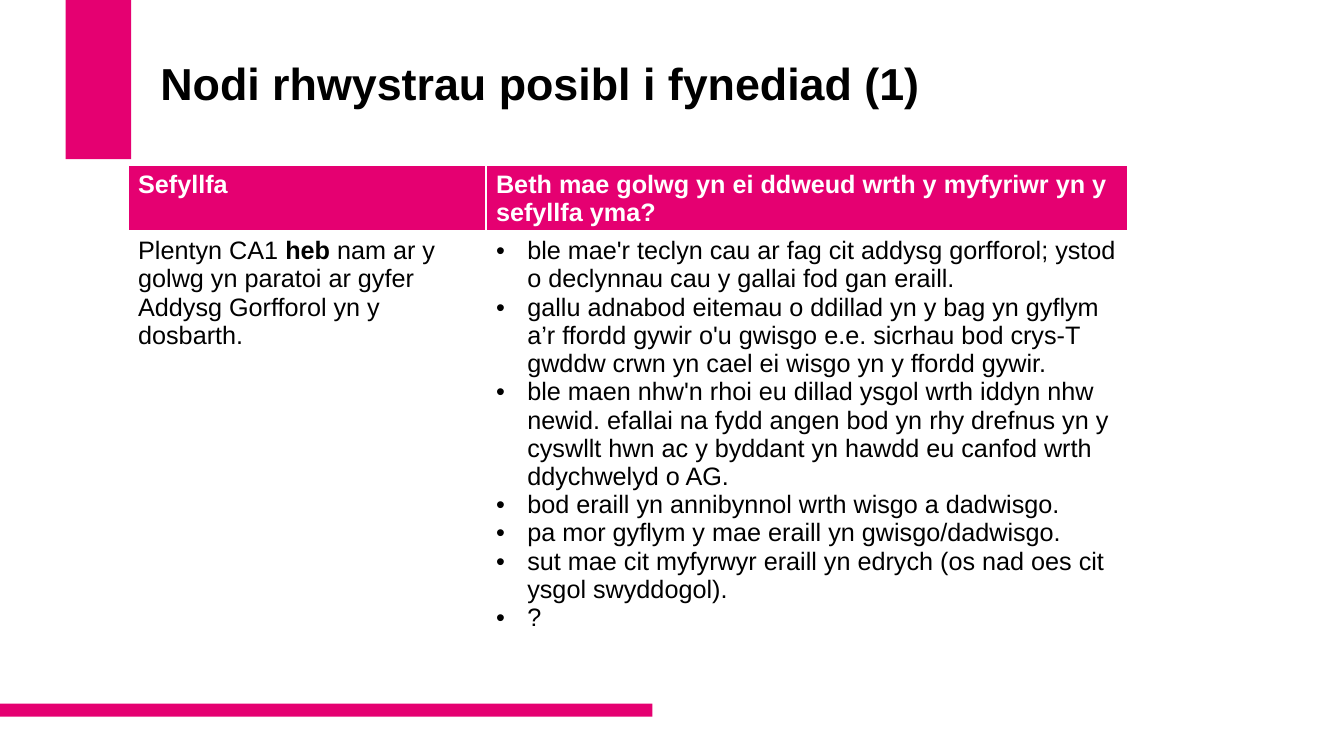
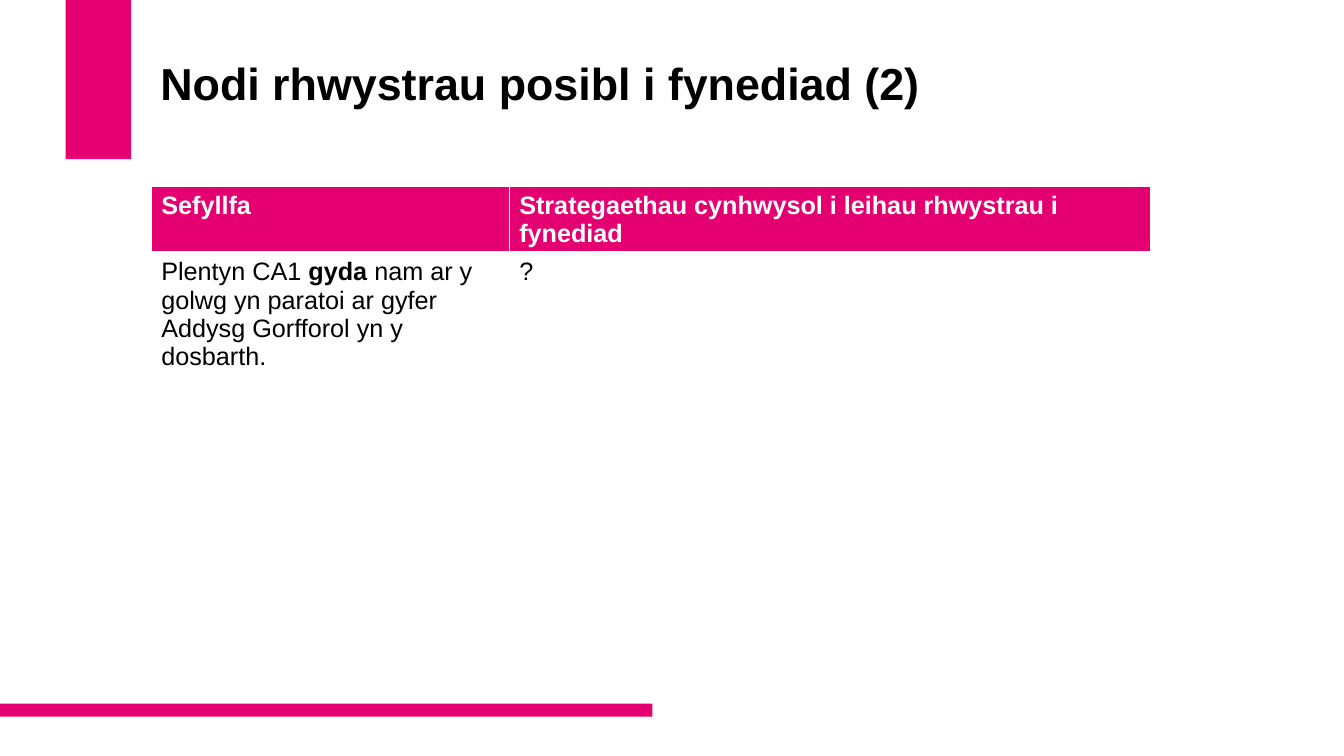
from lxml.etree import SubElement
from pptx import Presentation
from pptx.dml.color import RGBColor
from pptx.enum.shapes import MSO_SHAPE as SHAPE
from pptx.enum.text import MSO_ANCHOR as ANCHOR
from pptx.oxml.ns import qn
from pptx.util import Inches, Pt

PINK, WHITE, BLACK = "E50071", "FFFFFF", "000000"
FONT = "Arial"
BANDS = [(0.65, 0, 0.65, 1.58), (0, 6.98, 6.47, 0.13)]
TITLE_BOX = (1.49, 0.4, 9.6, 1.45)
COLUMNS, ROWS = (3.55, 6.36), (0.64, 4.31)

SLIDES = [
    dict(
        title="Nodi rhwystrau posibl i fynediad (1)",
        origin=(1.27, 1.64),
        heading="Beth mae golwg yn ei ddweud wrth y myfyriwr yn y sefyllfa yma?",
        stress="heb ",
        answers=[
            "ble mae'r teclyn cau ar fag cit addysg gorfforol; ystod o declynnau cau y gallai fod gan eraill.",
            "gallu adnabod eitemau o ddillad yn y bag yn gyflym a’r ffordd gywir o'u gwisgo e.e. sicrhau bod "
            "crys-T gwddw crwn yn cael ei wisgo yn y ffordd gywir.",
            "ble maen nhw'n rhoi eu dillad ysgol wrth iddyn nhw newid. efallai na fydd angen bod yn rhy drefnus "
            "yn y cyswllt hwn ac y byddant yn hawdd eu canfod wrth ddychwelyd o AG.",
            "bod eraill yn annibynnol wrth wisgo a dadwisgo.",
            "pa mor gyflym y mae eraill yn gwisgo/dadwisgo.",
            "sut mae cit myfyrwyr eraill yn edrych (os nad oes cit ysgol swyddogol).",
            "?",
        ],
    ),
    dict(
        title="Nodi rhwystrau posibl i fynediad (2)",
        origin=(1.5, 1.85),
        heading="Strategaethau cynhwysol i leihau rhwystrau i fynediad",
        stress="gyda ",
        answers=["?"],
    ),
]


def rgb(value):
    """Turn a hex string into a colour."""
    return RGBColor.from_string(value)


def add_bullet(p):
    """Give a paragraph a hanging bullet."""
    pPr = p._p.get_or_add_pPr()
    pPr.set("marL", str(Inches(0.31)))
    pPr.set("indent", str(-Inches(0.31)))
    SubElement(pPr, qn("a:buFont"), typeface=FONT)
    SubElement(pPr, qn("a:buChar"), char="•")


def write(tf, paragraphs, size=18, color=BLACK, bold=False, bullets=False, spacing=None):
    """Fill a text frame; a paragraph is a string or a list of (text, bold) runs."""
    for i, runs in enumerate(paragraphs):
        p = tf.add_paragraph() if i else tf.paragraphs[0]
        if spacing:
            p.line_spacing = spacing
        if bullets:
            add_bullet(p)
        for text, strong in [(runs, bold)] if isinstance(runs, str) else runs:
            r = p.add_run()
            r.text = text
            r.font.name, r.font.size, r.font.bold = FONT, Pt(size), strong
            r.font.color.rgb = rgb(color)


def add_bands(s, layout):
    """Draw the bands and move them to the layout in place of its footers."""
    for ph in list(layout.placeholders)[1:]:
        ph.element.getparent().remove(ph.element)
    for box in BANDS:
        sp = s.shapes.add_shape(SHAPE.RECTANGLE, *map(Inches, box))
        sp.shadow.inherit = False
        sp.fill.solid()
        sp.fill.fore_color.rgb = rgb(PINK)
        sp.line.fill.background()
        layout.shapes.element.append(sp.element)


def add_title(s, text, box):
    """Place and format the title, set above the middle of its box."""
    sp = s.shapes.title
    sp.left, sp.top, sp.width, sp.height = map(Inches, box)
    tf = sp.text_frame
    tf.word_wrap = True
    tf.vertical_anchor = ANCHOR.MIDDLE
    tf.margin_bottom = Inches(0.6)
    write(tf, [text], size=32, bold=True, spacing=0.9)
    tf.paragraphs[0].alignment = 1


def style_cell(cell, fill, bottom):
    """Give a cell white borders and a solid fill."""
    tcPr = cell._tc.get_or_add_tcPr()
    for side, width in dict(L=1, R=1, T=1, B=bottom).items():
        ln = SubElement(tcPr, qn(f"a:ln{side}"), w=str(Pt(width)))
        SubElement(SubElement(ln, qn("a:solidFill")), qn("a:srgbClr"), val=WHITE)
    cell.fill.solid()
    cell.fill.fore_color.rgb = rgb(fill)


def add_situation_table(s, origin, heading, stress, answers):
    """Add the table that sets a situation beside its answers."""
    box = (*origin, sum(COLUMNS), sum(ROWS))
    table = s.shapes.add_table(2, 2, *map(Inches, box)).table
    for column, width in zip(table.columns, COLUMNS):
        column.width = Inches(width)
    for row, height in zip(table.rows, ROWS):
        row.height = Inches(height)
    situation = [
        ("Plentyn CA1 ", False),
        (stress, True),
        ("nam ar y golwg yn paratoi ar gyfer Addysg Gorfforol yn y dosbarth.", False),
    ]
    for i, text in enumerate(("Sefyllfa", heading)):
        style_cell(table.cell(0, i), PINK, 3)
        write(table.cell(0, i).text_frame, [text], color=WHITE, bold=True)
        style_cell(table.cell(1, i), WHITE, 1)
    write(table.cell(1, 0).text_frame, [situation])
    write(table.cell(1, 1).text_frame, answers, bullets=len(answers) > 1)


def main():
    """Build and save the presentation."""
    prs = Presentation()
    prs.slide_width, prs.slide_height = Inches(13.33), Inches(7.5)
    layout = prs.slide_layouts[5]
    for i, content in enumerate(SLIDES):
        s = prs.slides.add_slide(layout)
        if i == 0:
            add_bands(s, layout)
        add_title(s, content["title"], TITLE_BOX)
        add_situation_table(s, *(content[k] for k in ("origin", "heading", "stress", "answers")))
    prs.save("out.pptx")


if __name__ == "__main__":
    main()
